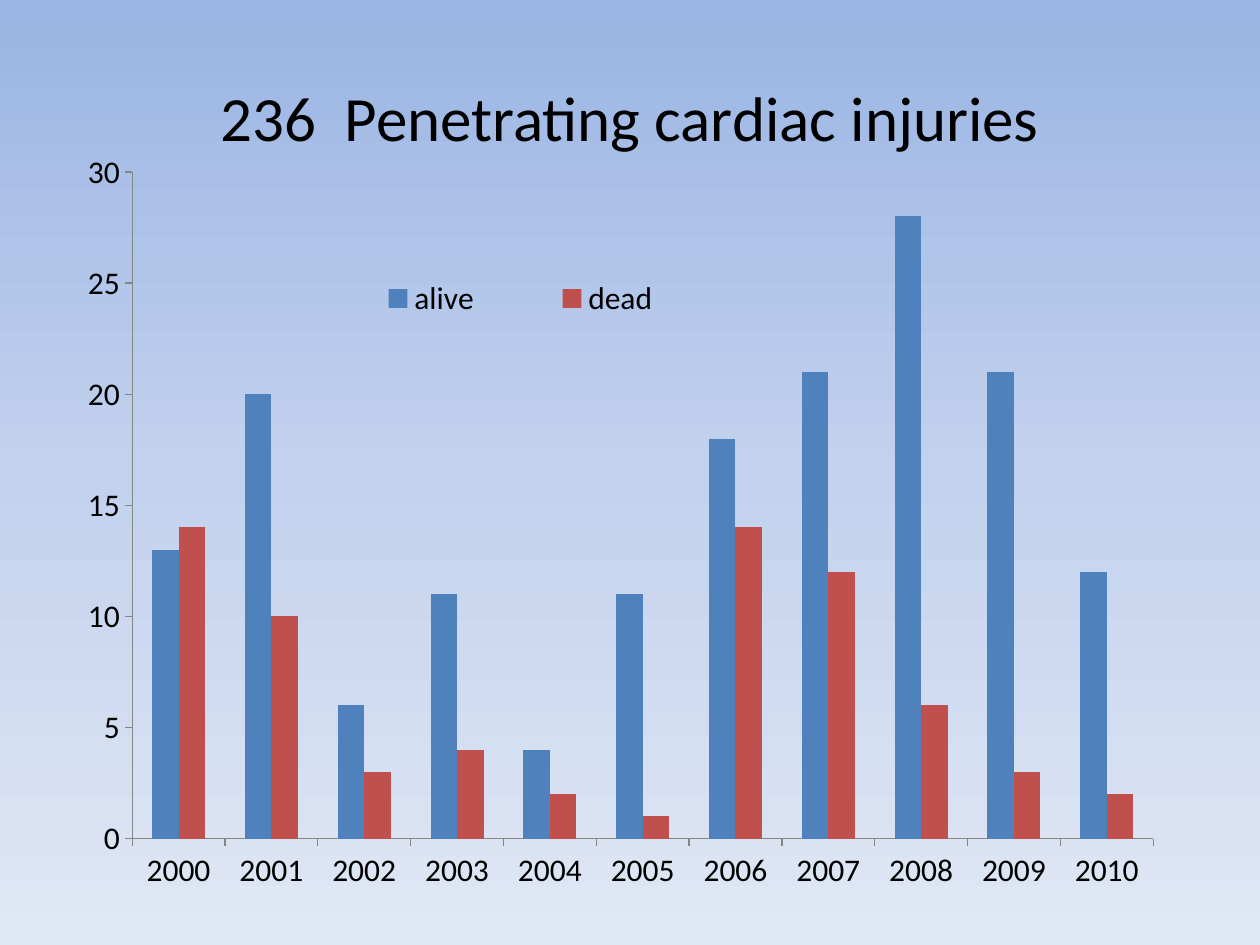
import copy

import pptx
import pptx.chart.data
import pptx.dml.color
import pptx.enum.chart
import pptx.enum.text
import pptx.oxml
import pptx.oxml.ns
import pptx.util
from pptx.util import Cm

FONT = "Calibri"
BLACK = "000000"
AXIS_GREY = "868686"
BACKGROUND_STOPS = [(0, "9AB5E4"), (0.5, "C2D1ED"), (1, "E1E8F5")]
YEARS = [str(year) for year in range(2000, 2011)]
OUTCOMES = [
    ("alive", "4F81BD", [13, 20, 6, 11, 4, 11, 18, 21, 28, 21, 12]),
    ("dead", "C0504D", [14, 10, 3, 4, 2, 1, 14, 12, 6, 3, 2]),
]


def rgb(value):
    """Return the colour for a hex string."""
    return pptx.dml.color.RGBColor.from_string(value)


def format_font(font, size, color=BLACK):
    """Set the typeface, size and colour of a font."""
    font.name = FONT
    font.size = pptx.util.Pt(size)
    font.color.rgb = rgb(color)


def write_text(frame, text, size=18, color=BLACK,
               align=pptx.enum.text.PP_ALIGN.CENTER,
               anchor=pptx.enum.text.MSO_ANCHOR.MIDDLE):
    """Fill a text frame with one formatted paragraph."""
    frame.word_wrap = True
    frame.vertical_anchor = anchor
    paragraph = frame.paragraphs[0]
    paragraph.alignment = align
    run = paragraph.add_run()
    run.text = text
    format_font(run.font, size, color)


def paint_background(slide, stops):
    """Give the slide a gradient running from top to bottom."""
    fill = slide.background.fill
    fill.gradient()
    fill.gradient_angle = 270
    stop_list = slide.element.xpath(".//p:bg//a:gsLst")[0]
    while len(stop_list) < len(stops):
        stop_list.append(copy.deepcopy(stop_list[0]))
    for stop, (position, color) in zip(fill.gradient_stops, stops):
        stop.position = position
        stop.color.rgb = rgb(color)


def add_title(slide, text):
    """Place and fill the title placeholder."""
    title = slide.shapes.title
    title.left, title.top = Cm(1.27), Cm(0.76)
    title.width, title.height = Cm(22.86), Cm(3.18)
    write_text(title.text_frame, text, size=36)


def set_layout(part, x, y, w, h, inner=False):
    """Fix a chart part at fractions of the chart area."""
    target = '<c:layoutTarget val="inner"/>' if inner else ""
    values = "".join(f'<c:{name} val="{value}"/>'
                     for name, value in zip("xywh", (x, y, w, h)))
    layout = pptx.oxml.parse_xml(
        f'<c:layout {pptx.oxml.ns.nsdecls("c")}><c:manualLayout>{target}'
        '<c:xMode val="edge"/><c:yMode val="edge"/>'
        f'{values}</c:manualLayout></c:layout>')
    for old in part.findall(pptx.oxml.ns.qn("c:layout")):
        part.remove(old)
    part.insert(0 if inner else 1, layout)


def format_axis(axis):
    """Draw an axis with a thin grey line and outside ticks."""
    axis.has_major_gridlines = False
    axis.major_tick_mark = pptx.enum.chart.XL_TICK_MARK.OUTSIDE
    axis.minor_tick_mark = pptx.enum.chart.XL_TICK_MARK.NONE
    axis.format.line.color.rgb = rgb(AXIS_GREY)
    axis.format.line.width = pptx.util.Pt(0.75)
    format_font(axis.tick_labels.font, 18)


def add_legend(chart):
    """Set the legend over the empty upper part of the plot."""
    chart.has_legend = True
    legend = chart.legend
    legend.position = pptx.enum.chart.XL_LEGEND_POSITION.RIGHT
    legend.include_in_layout = False
    format_font(legend.font, 18)
    set_layout(legend._element, 0.2, 0.17, 0.34, 0.08)


def add_outcome_chart(slide):
    """Add the yearly columns of survivors and deaths."""
    data = pptx.chart.data.CategoryChartData()
    data.categories = YEARS
    for name, _, counts in OUTCOMES:
        data.add_series(name, counts)
    chart = slide.shapes.add_chart(
        pptx.enum.chart.XL_CHART_TYPE.COLUMN_CLUSTERED,
        Cm(1.27), Cm(2.77), Cm(24.92), Cm(15.47), data).chart
    chart.has_title = False
    format_font(chart.font, 18)

    plot = chart.plots[0]
    plot.gap_width = 150
    plot.overlap = 0
    plot.vary_by_categories = False
    for series, (_, color, _) in zip(plot.series, OUTCOMES):
        series.format.fill.solid()
        series.format.fill.fore_color.rgb = rgb(color)

    for axis in (chart.category_axis, chart.value_axis):
        format_axis(axis)
    chart.value_axis.minimum_scale = 0
    chart.value_axis.maximum_scale = 30
    chart.value_axis.major_unit = 5

    plot_area = chart._chartSpace.xpath("c:chart/c:plotArea")[0]
    set_layout(plot_area, 0.056, 0.045, 0.826, 0.869, inner=True)
    add_legend(chart)


def main():
    """Build the slide and save it."""
    deck = pptx.Presentation()
    deck.slide_width, deck.slide_height = Cm(25.4), Cm(19.05)
    slide = deck.slides.add_slide(deck.slide_layouts[5])
    paint_background(slide, BACKGROUND_STOPS)
    add_title(slide, "236  Penetrating cardiac injuries")
    add_outcome_chart(slide)
    deck.save("out.pptx")


if __name__ == "__main__":
    main()
